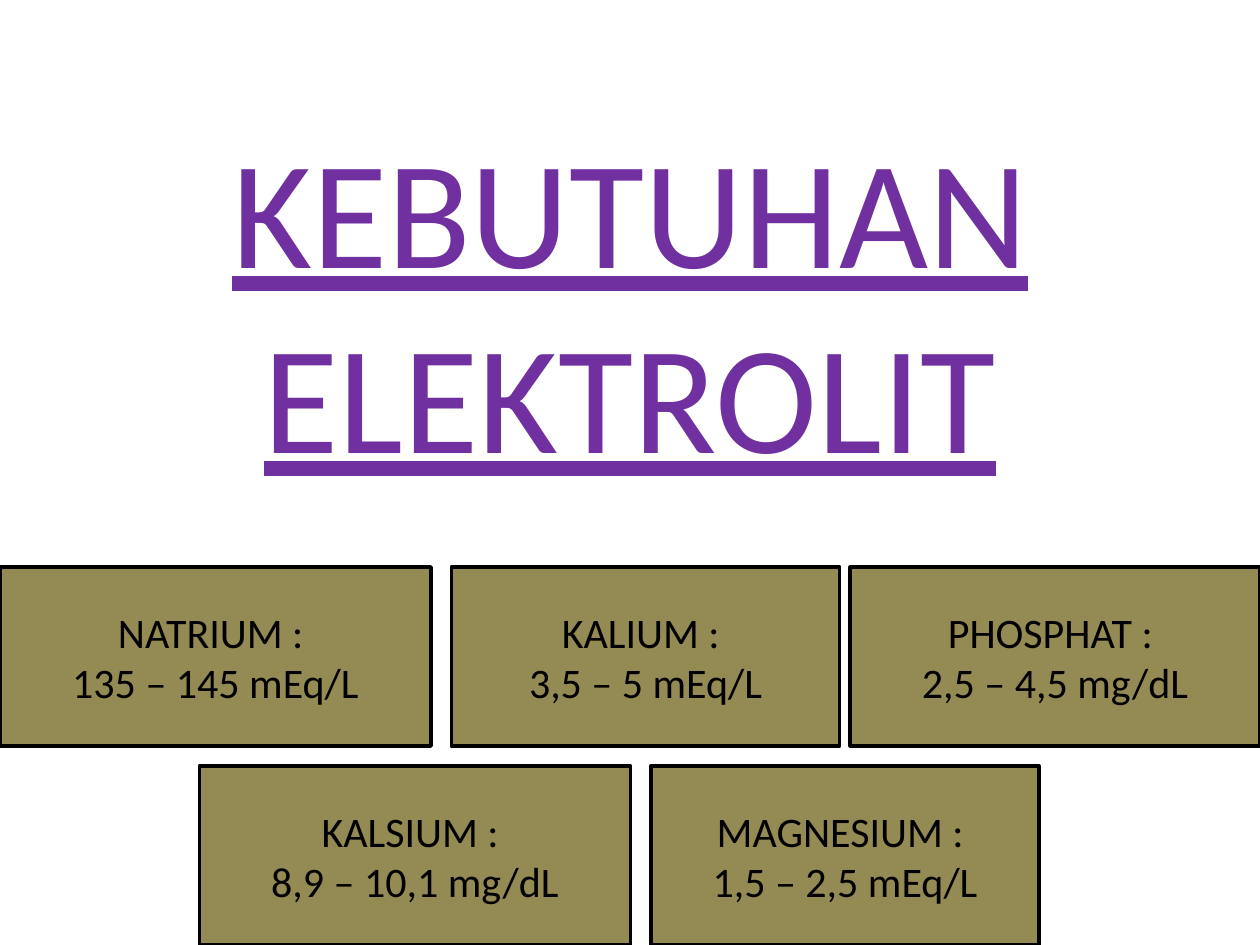
"""Build the slide on electrolyte requirements with its five normal ranges."""
from dataclasses import dataclass

from pptx import Presentation
from pptx.dml.color import RGBColor
from pptx.enum.shapes import MSO_SHAPE
from pptx.enum.text import MSO_ANCHOR, MSO_AUTO_SIZE, PP_ALIGN
from pptx.util import Cm, Pt

RECTANGLE = MSO_SHAPE.RECTANGLE
MIDDLE = MSO_ANCHOR.MIDDLE
NO_AUTOFIT = MSO_AUTO_SIZE.NONE
CENTER = PP_ALIGN.CENTER
TITLE_ONLY = 5


@dataclass(frozen=True)
class Theme:
    font: str = "Calibri"
    heading: RGBColor = RGBColor(0x70, 0x30, 0xA0)
    card: RGBColor = RGBColor(0x94, 0x8A, 0x54)
    ink: RGBColor = RGBColor(0, 0, 0)
    heading_size: Pt = Pt(88)
    card_size: Pt = Pt(24)
    border: Pt = Pt(2)


theme = Theme()


def write(frame, lines, color, **font_format):
    for name, value in {"word_wrap": True, "auto_size": NO_AUTOFIT,
                        "vertical_anchor": MIDDLE}.items():
        setattr(frame, name, value)
    for index, line in enumerate(lines):
        paragraph = frame.add_paragraph() if index else frame.paragraphs[0]
        paragraph.alignment = CENTER
        run = paragraph.add_run()
        run.text = line
        run.font.color.rgb = color
        for name, value in {"name": theme.font, **font_format}.items():
            setattr(run.font, name, value)


deck = Presentation()
deck.slide_width, deck.slide_height = Cm(25.4), Cm(19.05)
slide = deck.slides.add_slide(deck.slide_layouts[TITLE_ONLY])

heading = slide.shapes.title
for side, length in {"left": 0, "top": 1.48, "width": 25.4, "height": 9.1}.items():
    setattr(heading, side, Cm(length))
write(heading.text_frame, ["KEBUTUHAN ELEKTROLIT"], theme.heading,
      size=theme.heading_size, underline=True)

UPPER_ROW, LOWER_ROW, CARD_HEIGHT = 11.43, 15.44, 3.61
electrolytes = [
    ("NATRIUM", "135 – 145 mEq/L", 0, UPPER_ROW, 8.69),
    ("KALIUM", "3,5 – 5 mEq/L", 9.1, UPPER_ROW, 7.83),
    ("KALSIUM", "8,9 – 10,1 mg/dL", 4.02, LOWER_ROW, 8.69),
    ("MAGNESIUM", "1,5 – 2,5 mEq/L", 13.12, LOWER_ROW, 7.83),
    ("PHOSPHAT", "2,5 – 4,5 mg/dL", 17.14, UPPER_ROW, 8.26),
]
for electrolyte, normal_range, left, top, width in electrolytes:
    card = slide.shapes.add_shape(
        RECTANGLE, Cm(left), Cm(top), Cm(width), Cm(CARD_HEIGHT))
    card.shadow.inherit = False
    card.fill.solid()
    card.fill.fore_color.rgb = theme.card
    card.line.color.rgb = theme.ink
    card.line.width = theme.border
    write(card.text_frame, [f"{electrolyte} : ", normal_range], theme.ink,
          size=theme.card_size)

deck.save("out.pptx")
